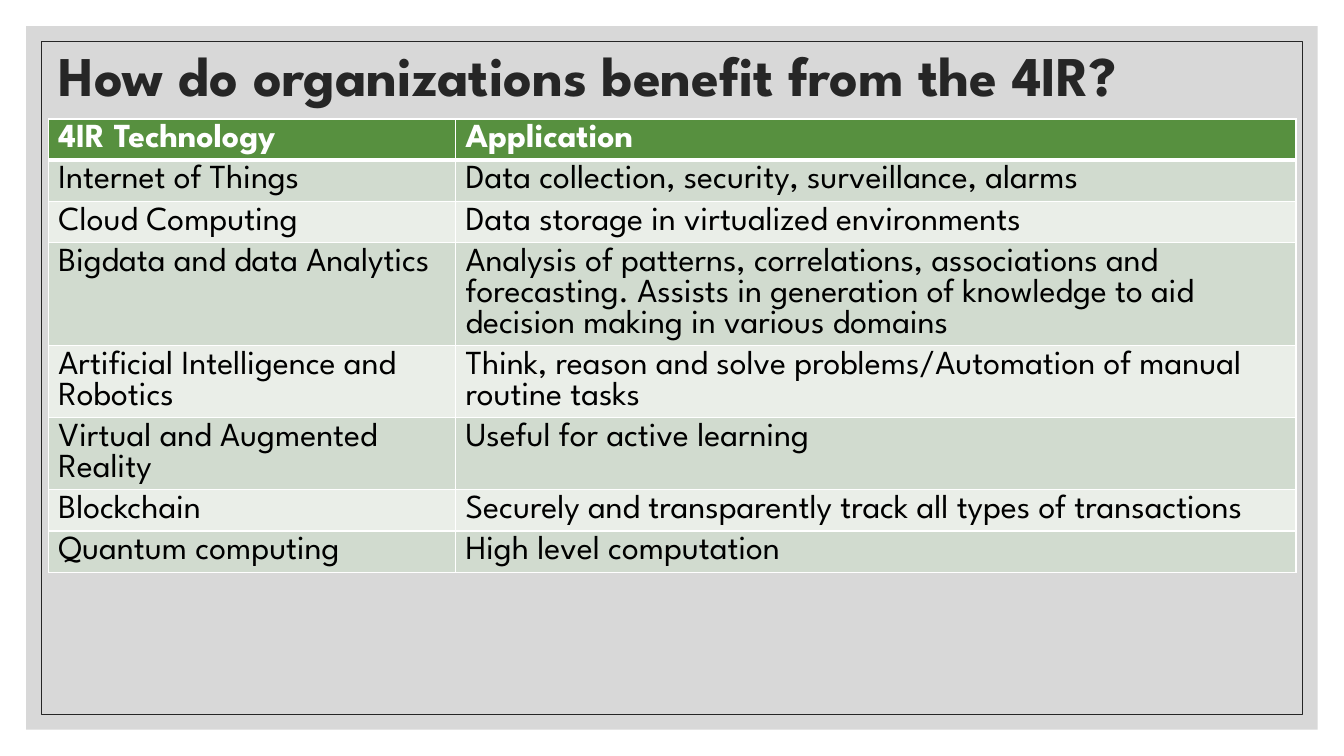
from lxml.etree import SubElement
from pptx import Presentation
from pptx.dml.color import RGBColor
from pptx.enum.shapes import MSO_SHAPE as Shape
from pptx.enum.text import MSO_ANCHOR as Anchor, MSO_AUTO_SIZE as AutoSize, PP_ALIGN as Align
from pptx.oxml.ns import qn
from pptx.util import Cm, Pt

# Content
HEADING = "How do organizations benefit from the 4IR?"
TECHNOLOGIES = [
    ("4IR Technology", "Application"),
    ("Internet of Things", "Data collection, security, surveillance, alarms"),
    ("Cloud Computing", "Data storage in virtualized environments"),
    ("Bigdata and data Analytics",
     "Analysis of patterns, correlations, associations and forecasting. "
     "Assists in generation of knowledge to aid decision making in various domains"),
    ("Artificial Intelligence and Robotics",
     "Think, reason and solve problems/Automation of manual routine tasks"),
    ("Virtual and Augmented Reality", "Useful for active learning"),
    ("Blockchain", "Securely and transparently track all types of transactions"),
    ("Quantum computing", "High level computation"),
]

# Look and measures in centimetres
FONT = "League Spartan"
DARK, WHITE, BLACK, GREY = "262626", "FFFFFF", "000000", "BFBFBF"
GREEN, BANDS = "57903F", ("EAEEE8", "D1DBCF")
SLIDE_W, SLIDE_H = 33.87, 19.05
LEFT, TITLE_TOP, TITLE_H = 1.22, 0.97, 2.03
COLUMNS, ROW_H = (10.26, 21.18), 1.04


def colour(value):
    return RGBColor.from_string(value)


def add_text(frame, text, size, value, bold):
    paragraph = frame.paragraphs[0]
    paragraph.alignment = Align.LEFT
    run = paragraph.add_run()
    run.text = text
    run.font.name, run.font.size, run.font.bold = FONT, Pt(size), bold
    run.font.color.rgb = colour(value)
    return paragraph


def add_panel(slide, margin):
    panel = slide.shapes.add_shape(
        Shape.RECTANGLE, Cm(margin), Cm(margin),
        Cm(SLIDE_W - 2 * margin), Cm(SLIDE_H - 2 * margin))
    panel.shadow.inherit = False
    return panel


def add_border(cell, side, width):
    line = SubElement(cell._tc.get_or_add_tcPr(), qn(f"a:ln{side}"), w=str(Pt(width)))
    SubElement(SubElement(line, qn("a:solidFill")), qn("a:srgbClr"), val=WHITE)


deck = Presentation()
deck.slide_width, deck.slide_height = Cm(SLIDE_W), Cm(SLIDE_H)
slide = deck.slides.add_slide(deck.slide_layouts[5])

# Translucent backdrop and thin frame
backdrop = add_panel(slide, 0.66)
backdrop.fill.solid()
backdrop.fill.fore_color.rgb = colour(GREY)
backdrop.line.fill.background()
tint = backdrop._element.spPr.find(qn("a:solidFill"))[0]
SubElement(tint, qn("a:alpha"), val="60000")

border = add_panel(slide, 1.04)
border.fill.background()
border.line.color.rgb = colour(DARK)
border.line.width = Pt(0.5)

# Heading, brought in front of the backdrop
heading = slide.shapes.title
slide.shapes._spTree.append(heading._element)
heading.left, heading.top = Cm(LEFT), Cm(TITLE_TOP)
heading.width, heading.height = Cm(sum(COLUMNS)), Cm(TITLE_H)
heading.text_frame.auto_size = AutoSize.NONE
heading.text_frame.word_wrap = True
heading.text_frame.vertical_anchor = Anchor.MIDDLE
add_text(heading.text_frame, HEADING, 40, DARK, True).line_spacing = 0.9

# Technology table
table = slide.shapes.add_table(
    len(TECHNOLOGIES), len(COLUMNS), Cm(LEFT), Cm(TITLE_TOP + TITLE_H),
    Cm(sum(COLUMNS)), Cm(ROW_H * len(TECHNOLOGIES))).table
for column, width in zip(table.columns, COLUMNS):
    column.width = Cm(width)

for r, entry in enumerate(TECHNOLOGIES):
    table.rows[r].height = Cm(ROW_H)
    is_header = r == 0
    for c, text in enumerate(entry):
        cell = table.cell(r, c)
        add_text(cell.text_frame, text, 24, WHITE if is_header else BLACK, is_header)
        # The rule under the header row is thicker
        widths = {"L": 1, "R": 1, "T": 3 if r == 1 else 1, "B": 3 if is_header else 1}
        for side, width in widths.items():
            add_border(cell, side, width)
        cell.fill.solid()
        cell.fill.fore_color.rgb = colour(GREEN if is_header else BANDS[r % 2])

deck.save("out.pptx")
